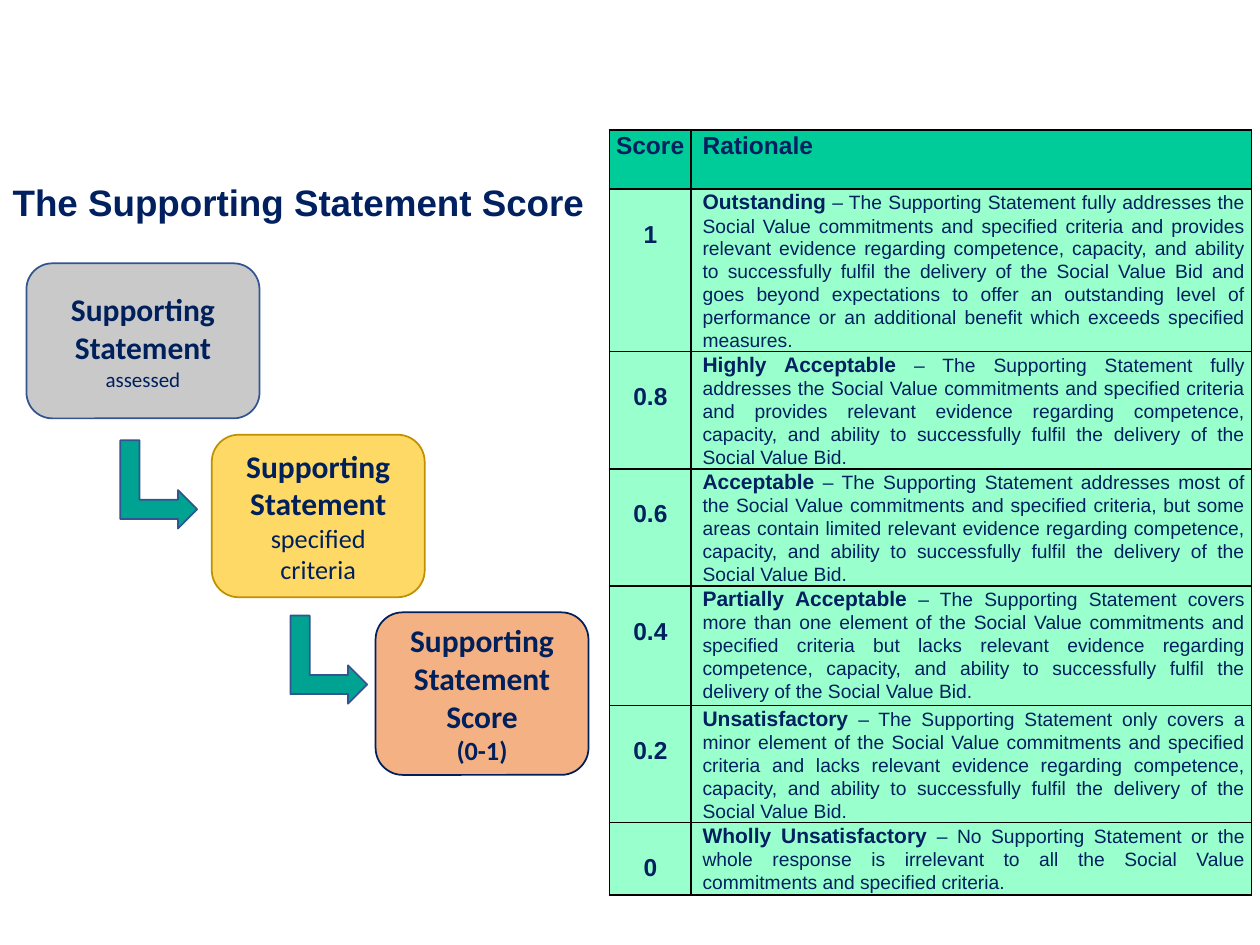
import pptx
import pptx.util
import pptx.dml.color
import pptx.enum.shapes
import pptx.enum.text
import pptx.oxml
import pptx.oxml.ns

Pt = pptx.util.Pt
ALIGN = pptx.enum.text.PP_ALIGN
ANCHOR = pptx.enum.text.MSO_ANCHOR
SHAPE = pptx.enum.shapes.MSO_SHAPE

THEME = {
    "navy": "002060", "ink": "00205B", "outline": "325491", "gold_line": "BF9000",
    "grey": "C9C9C9", "gold": "FFD966", "peach": "F4B183", "teal": "00A291",
    "header": "00CC99", "row": "99FFCC", "border": "000000",
    "heading_font": "Arial", "step_font": "Calibri",
    "title": 21, "step": 18, "step_note": 15, "step_small": 12,
    "score": 14, "rating": 12, "reason": 11,
}

TITLE = "The Supporting Statement Score"

STEPS = [
    {"place": (15.1, 150.5, 133.2, 88.6), "fill": "grey", "line": "outline",
     "text": [[("Supporting Statement", "step", True)], [("assessed", "step_small", False)]]},
    {"place": (121, 248.4, 121.7, 92.9), "fill": "gold", "line": "gold_line",
     "text": [[("Supporting Statement ", "step", True), ("specified criteria", "step_note", False)]]},
    {"place": (214.6, 349.9, 121.7, 92.9), "fill": "peach", "line": "ink", "margins": (5, 3),
     "text": [[("Supporting Statement Score", "step", True)], [("(0-1)", "step_note", True)]]},
]

ARROW_PLACES = [(65.5, 254.9), (162.7, 355)]
ARROW_SIZE = (50.4, 43.9)

HEADINGS = ("Score", "Rationale")
DELIVERY = "competence, capacity, and ability to successfully fulfil the delivery of the Social Value Bid"
RATINGS = [
    ("1", "Outstanding", "The Supporting Statement fully addresses the Social Value commitments and specified "
     f"criteria and provides relevant evidence regarding {DELIVERY} and goes beyond expectations to offer an "
     "outstanding level of performance or an additional benefit which exceeds specified measures.", 92.6),
    ("0.8", "Highly Acceptable", "The Supporting Statement fully addresses the Social Value commitments and "
     f"specified criteria and provides relevant evidence regarding {DELIVERY}.", 66.9),
    ("0.6", "Acceptable", "The Supporting Statement addresses most of the Social Value commitments and "
     f"specified criteria, but some areas contain limited relevant evidence regarding {DELIVERY}.", 66.9),
    ("0.4", "Partially Acceptable", "The Supporting Statement covers more than one element of the Social Value "
     f"commitments and specified criteria but lacks relevant evidence regarding {DELIVERY}.", 68.3),
    ("0.2", "Unsatisfactory", "The Supporting Statement only covers a minor element of the Social Value "
     f"commitments and specified criteria and lacks relevant evidence regarding {DELIVERY}.", 66.9),
    ("0", "Wholly Unsatisfactory", "No Supporting Statement or the whole response is irrelevant to all the "
     "Social Value commitments and specified criteria.", 41.6),
]
TABLE_LEFT, TABLE_TOP = 348.4, 74.2
COLUMN_WIDTHS = (46.6, 320.2)
HEADER_HEIGHT = 33.8
SCORE_DROP = 17.2


def color(name):
    return pptx.dml.color.RGBColor.from_string(THEME[name])


def add_span(para, text, size, bold, font="heading_font", ink="navy"):
    span = para.add_run()
    span.text = text
    span.font.size = Pt(THEME[size])
    span.font.bold = bold
    span.font.name = THEME[font]
    span.font.color.rgb = color(ink)


def add_box(page, kind, place, fill, line):
    box = page.shapes.add_shape(kind, *map(Pt, place))
    box.shadow.inherit = False
    box.fill.solid()
    box.fill.fore_color.rgb = color(fill)
    box.line.color.rgb = color(line)
    box.line.width = Pt(1)
    return box


def add_step(page, step):
    box = add_box(page, SHAPE.ROUNDED_RECTANGLE, step["place"], step["fill"], step["line"])
    frame = box.text_frame
    frame.word_wrap = True
    frame.vertical_anchor = ANCHOR.MIDDLE
    if "margins" in step:
        side, edge = map(Pt, step["margins"])
        frame.margin_left = frame.margin_right = side
        frame.margin_top = frame.margin_bottom = edge
    for index, spans in enumerate(step["text"]):
        para = frame.add_paragraph() if index else frame.paragraphs[0]
        para.alignment = ALIGN.CENTER
        for text, size, bold in spans:
            add_span(para, text, size, bold, "step_font", "ink")


def add_borders(cell):
    properties = cell._tc.get_or_add_tcPr()
    for index, side in enumerate(("lnL", "lnR", "lnT", "lnB")):
        properties.insert(index, pptx.oxml.parse_xml(
            f'<a:{side} {pptx.oxml.ns.nsdecls("a")} w="{Pt(1)}"><a:solidFill>'
            f'<a:srgbClr val="{THEME["border"]}"/></a:solidFill></a:{side}>'))


def fill_cell(cell, spans, fill, align, left=3.6, top=0):
    cell.fill.solid()
    cell.fill.fore_color.rgb = color(fill)
    cell.margin_left, cell.margin_right = Pt(left), Pt(3.6)
    cell.margin_top, cell.margin_bottom = Pt(top), Pt(0)
    cell.vertical_anchor = ANCHOR.TOP
    add_borders(cell)
    para = cell.text_frame.paragraphs[0]
    para.alignment = align
    para.line_spacing = 1.07
    for text, size, bold in spans:
        add_span(para, text, size, bold)


def add_ratings(page):
    heights = [HEADER_HEIGHT] + [rating[3] for rating in RATINGS]
    table = page.shapes.add_table(
        len(heights), len(COLUMN_WIDTHS), Pt(TABLE_LEFT), Pt(TABLE_TOP),
        Pt(sum(COLUMN_WIDTHS)), Pt(sum(heights))).table
    table.first_row = table.horz_banding = False
    for column, width in zip(table.columns, COLUMN_WIDTHS):
        column.width = Pt(width)
    for row, height in zip(table.rows, heights):
        row.height = Pt(height)
    for index, (heading, left) in enumerate(zip(HEADINGS, (3.6, 6.5))):
        fill_cell(table.cell(0, index), [(heading, "score", True)], "header", ALIGN.LEFT, left)
    for index, (score, rating, reason, _) in enumerate(RATINGS, 1):
        fill_cell(table.cell(index, 0), [(score, "score", True)], "row", ALIGN.CENTER, top=SCORE_DROP)
        fill_cell(table.cell(index, 1), [(rating, "rating", True), (f" – {reason}", "reason", False)],
                  "row", ALIGN.JUSTIFY, 6.5)


def add_title(page):
    title = page.shapes.title
    title.left, title.top, title.width, title.height = map(Pt, (0, 102.2, 359.3, 42.5))
    frame = title.text_frame
    frame.auto_size = pptx.enum.text.MSO_AUTO_SIZE.NONE
    frame.vertical_anchor = ANCHOR.TOP
    para = frame.paragraphs[0]
    para.alignment = ALIGN.LEFT
    para.line_spacing = 0.9
    add_span(para, TITLE, "title", True)


def main():
    deck = pptx.Presentation()
    deck.slide_width, deck.slide_height = Pt(720), Pt(540)
    page = deck.slides.add_slide(deck.slide_layouts[5])
    add_title(page)
    for step in STEPS:
        add_step(page, step)
    for place in ARROW_PLACES:
        arrow = add_box(page, SHAPE.BENT_UP_ARROW, place + ARROW_SIZE, "teal", "outline")
        arrow.rotation = 90
    add_ratings(page)
    deck.save("out.pptx")


if __name__ == "__main__":
    main()
